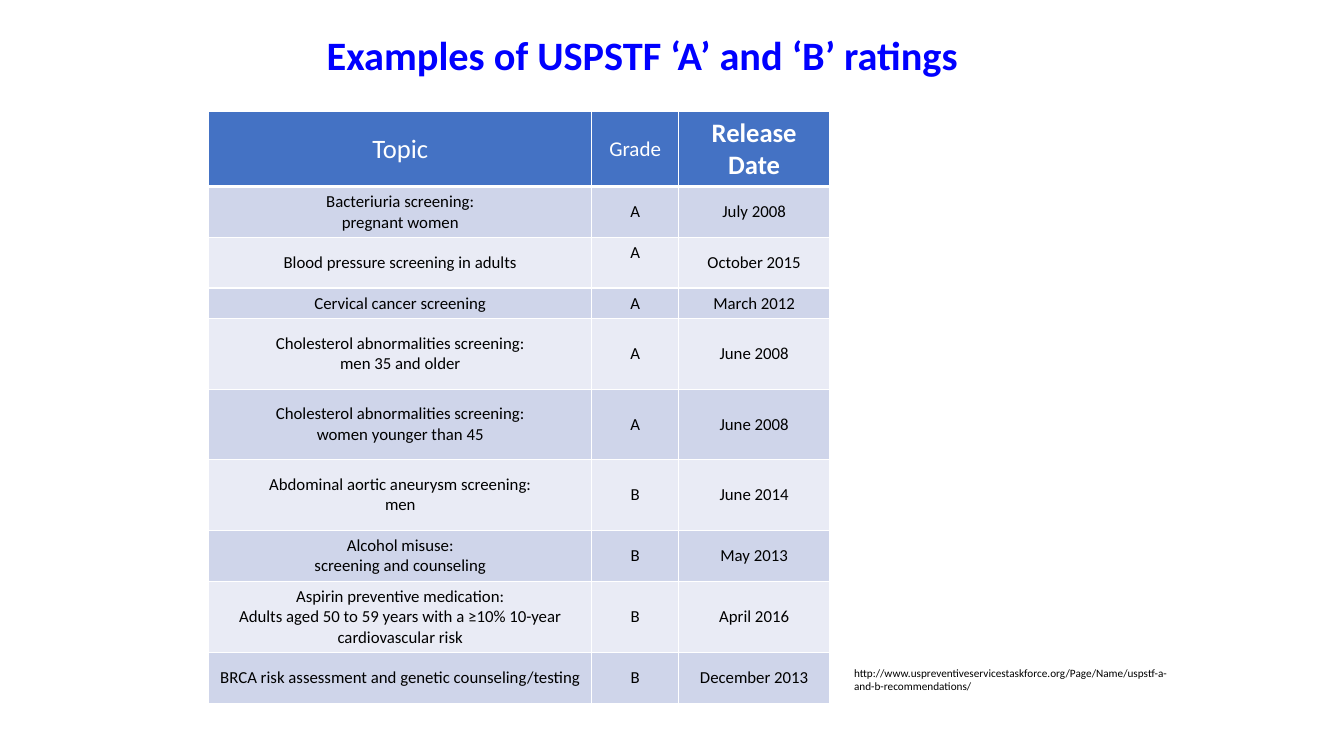
from lxml.etree import SubElement
from pptx import Presentation
from pptx.dml.color import RGBColor
from pptx.enum.text import MSO_ANCHOR, MSO_AUTO_SIZE, PP_ALIGN
from pptx.oxml import parse_xml
from pptx.oxml.ns import nsdecls, qn
from pptx.util import Pt

PX = 9144  # 100 px to the inch

BLUE = RGBColor(0x00, 0x00, 0xFF)
HEADER = RGBColor(0x44, 0x72, 0xC4)
BAND_DARK = RGBColor(0xCF, 0xD5, 0xEA)
BAND_LIGHT = RGBColor(0xE9, 0xEB, 0xF5)
WHITE = RGBColor(0xFF, 0xFF, 0xFF)
BLACK = RGBColor(0x00, 0x00, 0x00)

COLUMNS = [380, 86, 150]
HEADINGS = [("Topic", 19, False), ("Grade", 15, False), ("Release Date", 19, True)]
HEADER_HEIGHT = 73
RATINGS = [  # row height, topic, grade, release date
    (50, "Bacteriuria screening:\npregnant women", "A", "July 2008"),
    (50, "Blood pressure screening in adults", "A", "October 2015"),
    (30, "Cervical cancer screening", "A", "March 2012"),
    (70, "Cholesterol abnormalities screening:\nmen 35 and older", "A", "June 2008"),
    (70, "Cholesterol abnormalities screening:\nwomen younger than 45", "A", "June 2008"),
    (70, "Abdominal aortic aneurysm screening:\nmen", "B", "June 2014"),
    (50, "Alcohol misuse:\nscreening and counseling", "B", "May 2013"),
    (70, "Aspirin preventive medication:\nAdults aged 50 to 59 years with a "
         "≥10% 10-year cardiovascular risk", "B", "April 2016"),
    (50, "BRCA risk assessment and genetic counseling/testing", "B", "December 2013"),
]
SOURCE = ("http://www.uspreventiveservicestaskforce.org/Page/Name/"
          "uspstf-a-and-b-recommendations/")


class SlideBuilder:
    font = "Calibri"

    def __init__(self, prs):
        self.s = prs.slides.add_slide(prs.slide_layouts[5])

    def set_text(self, tf, text, size, color, bold=False, align=PP_ALIGN.LEFT):
        tf.text = text
        for p in tf.paragraphs:
            p.alignment = align
            for r in p.runs:
                r.font.name, r.font.size, r.font.bold = self.font, Pt(size), bold
                r.font.color.rgb = color

    def margins(self, item, x, y):
        item.margin_left = item.margin_right = x * PX
        item.margin_top = item.margin_bottom = y * PX

    def title(self, text, x, y, w, h):
        sp = self.s.shapes.title
        sp.left, sp.top, sp.width, sp.height = (v * PX for v in (x, y, w, h))
        tf = sp.text_frame
        self.set_text(tf, text, 28.8, BLUE, bold=True)
        tf.word_wrap = True
        tf.auto_size = MSO_AUTO_SIZE.NONE
        tf.vertical_anchor = MSO_ANCHOR.MIDDLE
        tf.paragraphs[0].line_spacing = 0.9

    def text(self, text, x, y, w, h, size):
        sp = self.s.shapes.add_textbox(x * PX, y * PX, w * PX, h * PX)
        tf = sp.text_frame
        tf.word_wrap = True
        tf.auto_size = MSO_AUTO_SIZE.SHAPE_TO_FIT_TEXT
        self.margins(tf, 7, 4)
        self.set_text(tf, text, size, BLACK)

    def borders(self, cell, bottom):
        tcPr = cell._tc.get_or_add_tcPr()
        for i, (side, width) in enumerate([("L", 1), ("R", 1), ("T", 1), ("B", bottom)]):
            ln = parse_xml(f'<a:ln{side} {nsdecls("a")} w="{Pt(width)}"/>')
            fill = SubElement(ln, qn("a:solidFill"))
            SubElement(fill, qn("a:srgbClr"), val=str(WHITE))
            tcPr.insert(i, ln)

    def cell(self, cell, text, size, color, fill, bold=False, bottom=1):
        self.set_text(cell.text_frame, text, size, color, bold, PP_ALIGN.CENTER)
        self.margins(cell, 7, 5)
        cell.vertical_anchor = MSO_ANCHOR.MIDDLE
        cell.fill.solid()
        cell.fill.fore_color.rgb = fill
        self.borders(cell, bottom)

    def table(self, x, y, columns, headings, header_height, rows):
        heights = [header_height] + [row[0] for row in rows]
        table = self.s.shapes.add_table(
            len(heights), len(columns), x * PX, y * PX,
            sum(columns) * PX, sum(heights) * PX).table
        for column, width in zip(table.columns, columns):
            column.width = width * PX
        for row, height in zip(table.rows, heights):
            row.height = height * PX
        for c, (text, size, bold) in enumerate(headings):
            self.cell(table.cell(0, c), text, size, WHITE, HEADER, bold, bottom=3)
        for r, (_, *texts) in enumerate(rows, 1):
            band = BAND_DARK if r % 2 else BAND_LIGHT
            for c, text in enumerate(texts):
                self.cell(table.cell(r, c), text, 12, BLACK, band)
        return table


def main():
    prs = Presentation()
    prs.slide_width, prs.slide_height = 1333 * PX, 750 * PX
    slide = SlideBuilder(prs)

    # Title
    slide.title("Examples of USPSTF ‘A’ and ‘B’ ratings", 314, 19, 675, 75)

    # Ratings table, with the blood pressure grade at the top of its cell
    table = slide.table(207, 111, COLUMNS, HEADINGS, HEADER_HEIGHT, RATINGS)
    table.cell(2, 1).vertical_anchor = MSO_ANCHOR.TOP

    # Source address
    slide.text(SOURCE, 840, 657, 328, 35, 8)

    prs.save("out.pptx")


if __name__ == "__main__":
    main()
